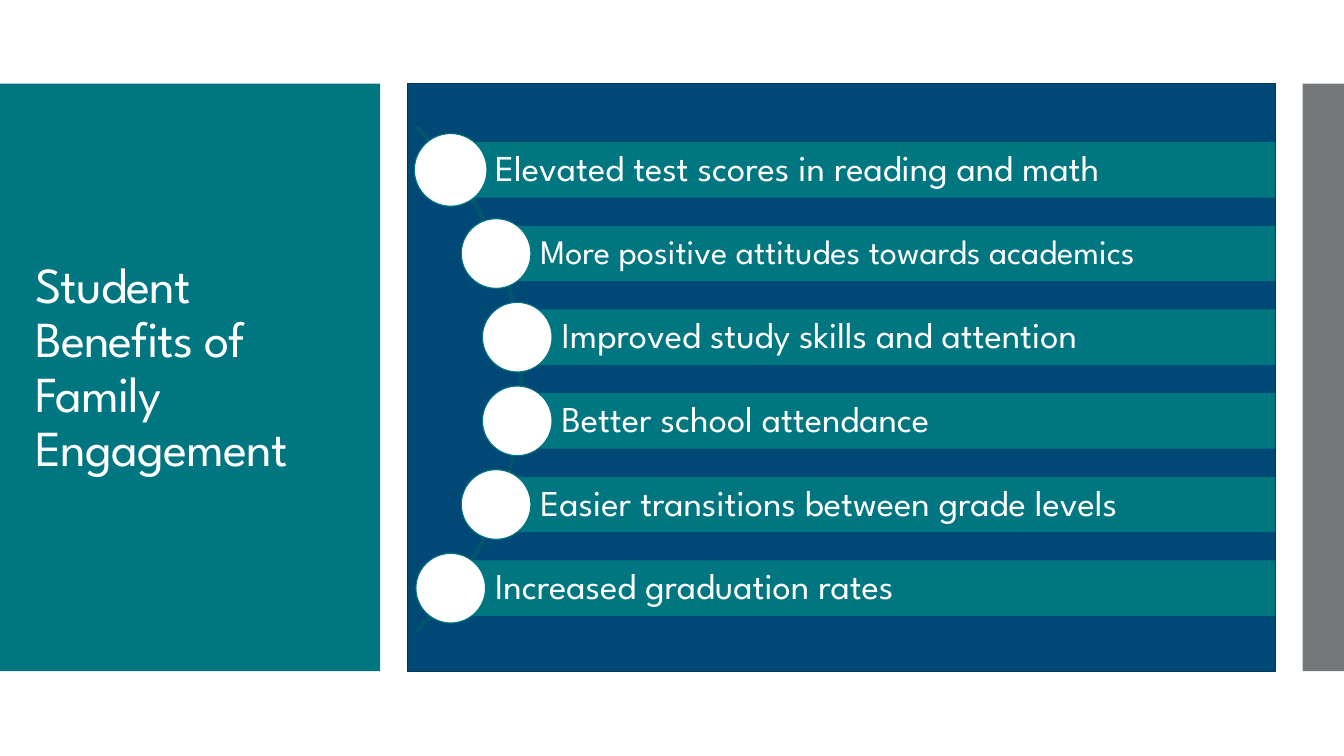
from lxml import etree
from pptx import Presentation
from pptx.dml.color import RGBColor
from pptx.enum import shapes, text
from pptx.util import Inches, Pt

FONT = "League Spartan"
WHITE = RGBColor(0xFF, 0xFF, 0xFF)
TEAL = RGBColor(0x00, 0x76, 0x81)
DARK_TEAL = RGBColor(0x00, 0x5E, 0x67)
NAVY = RGBColor(0x00, 0x49, 0x76)
DARK_NAVY = RGBColor(0x00, 0x36, 0x57)
GRAY = RGBColor(0x75, 0x78, 0x7B)

PANEL_TOP, PANEL_HEIGHT = 0.83, 5.83
BAR_RIGHT, BAR_HEIGHT = 12.65, 0.55
FIRST_BAR_TOP, ROW_STEP = 1.41, 0.83

# Benefit, left edge of its bar, text size, circle diameter
BENEFITS = [
    ("Elevated test scores in reading and math", 4.47, 26, 0.72),
    ("More positive attitudes towards academics", 4.92, 24.5, 0.69),
    ("Improved study skills and attention", 5.13, 26, 0.69),
    ("Better school attendance", 5.13, 26, 0.69),
    ("Easier transitions between grade levels", 4.92, 26, 0.69),
    ("Increased graduation rates", 4.47, 26, 0.69),
]


def add_shape(page, kind, left, top, width, height, fill=None, line=None, weight=0.85):
    shape = page.shapes.add_shape(
        kind, Inches(left), Inches(top), Inches(width), Inches(height))
    shape.shadow.inherit = False
    if fill is None:
        shape.fill.background()
    else:
        shape.fill.solid()
        shape.fill.fore_color.rgb = fill
    if line is None:
        shape.line.fill.background()
    else:
        shape.line.color.rgb = line
        shape.line.width = Pt(weight)
    return shape


def write_text(shape, content, size, insets=(0.1, 0.05, 0.1, 0.05), spacing=None):
    frame = shape.text_frame
    frame.word_wrap = True
    frame.auto_size = text.MSO_AUTO_SIZE.NONE
    frame.vertical_anchor = text.MSO_ANCHOR.MIDDLE
    (frame.margin_left, frame.margin_top,
     frame.margin_right, frame.margin_bottom) = map(Inches, insets)
    para = frame.paragraphs[0]
    para.alignment = text.PP_ALIGN.LEFT
    para.line_spacing = 0.9
    span = para.add_run()
    span.text = content
    span.font.name = FONT
    span.font.size = Pt(size)
    span.font.color.rgb = WHITE
    if spacing is not None:
        span.font._element.set("spc", str(round(spacing * 100)))


def add_panel(page, left, width, fill, line=None):
    add_shape(page, shapes.MSO_SHAPE.RECTANGLE, left, PANEL_TOP,
              width, PANEL_HEIGHT, fill, line)


def place_title(page):
    title = page.shapes.title
    title.left, title.top = Inches(0.25), Inches(2.4)
    title.width, title.height = Inches(3.31), Inches(2.52)
    write_text(title, "Student Benefits of Family Engagement", 36, spacing=-0.6)
    # Bring the title in front of its panel
    title.element.getparent().append(title.element)


def add_arc(page):
    arc = add_shape(page, shapes.MSO_SHAPE.BLOCK_ARC, -1.9, 0.22, 7.08, 7.08,
                    line=DARK_TEAL)
    for index, value in enumerate((189, 27, 0.003)):
        arc.adjustments[index] = value


def add_benefit(page, row, content, left, size, diameter):
    top = FIRST_BAR_TOP + row * ROW_STEP
    bar = add_shape(page, shapes.MSO_SHAPE.RECTANGLE, left, top,
                    BAR_RIGHT - left, BAR_HEIGHT, TEAL)
    write_text(bar, content, size, insets=(0.44, 0.07, 0.07, 0.07))
    # The circle is centred on the left end of the bar
    add_shape(page, shapes.MSO_SHAPE.OVAL, left - diameter / 2,
              top + (BAR_HEIGHT - diameter) / 2, diameter, diameter,
              WHITE, TEAL, 0.75)


def main():
    deck = Presentation()
    deck.slide_width, deck.slide_height = Inches(13.33), Inches(7.5)
    page = deck.slides.add_slide(deck.slide_layouts[5])
    page.background.fill.solid()
    page.background.fill.fore_color.rgb = WHITE

    # Background panels and title
    add_panel(page, 4.04, 8.61, NAVY, DARK_NAVY)
    add_panel(page, 0, 3.77, TEAL)
    add_panel(page, 12.92, 0.41, GRAY)
    place_title(page)

    # Curved list of benefits
    add_arc(page)
    for row, benefit in enumerate(BENEFITS):
        add_benefit(page, row, *benefit)

    deck.save("out.pptx")


if __name__ == "__main__":
    main()
